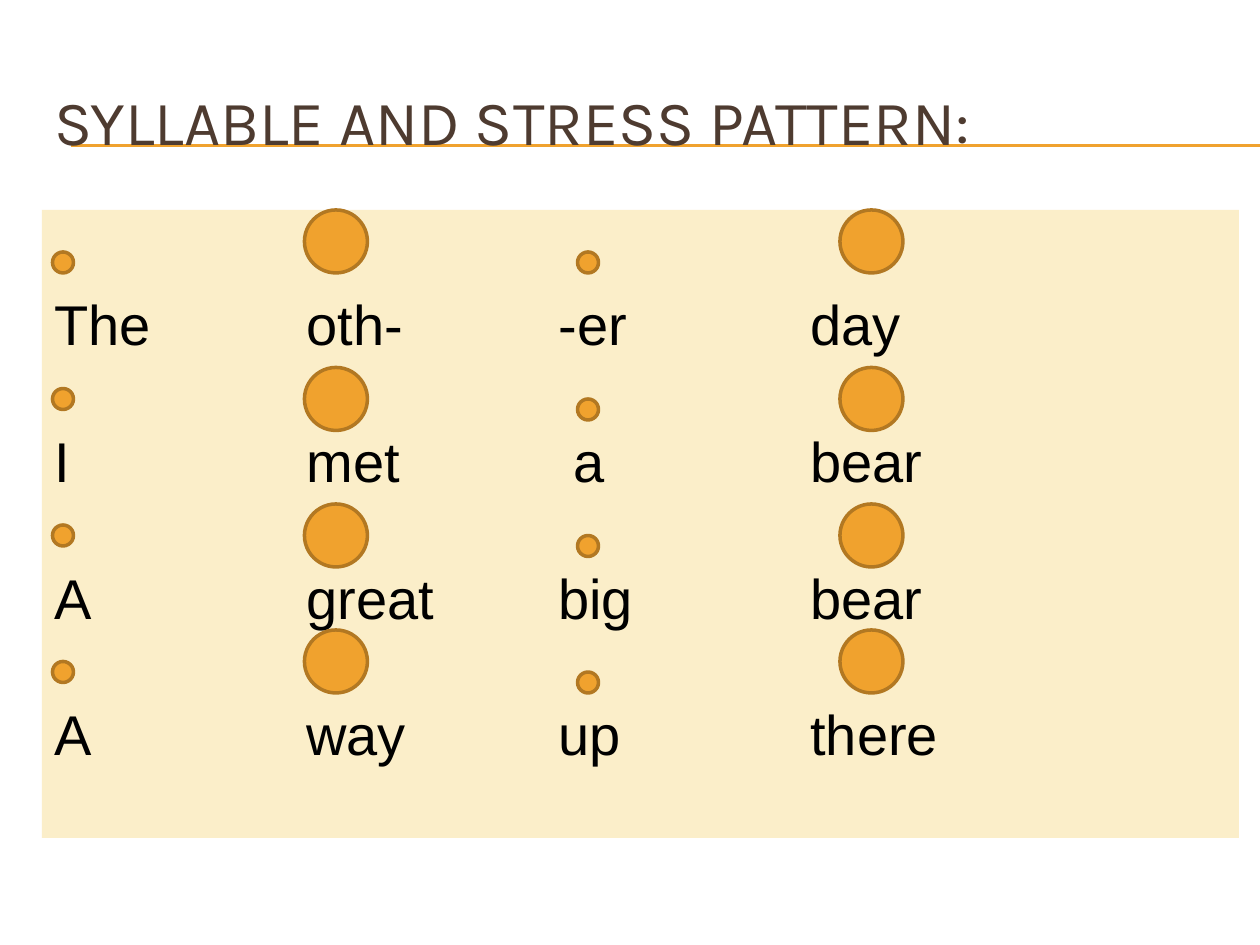
from lxml.etree import SubElement
from pptx import Presentation
from pptx.dml.color import RGBColor
from pptx.enum.shapes import MSO_CONNECTOR as Connector, MSO_SHAPE as Shape
from pptx.enum.text import MSO_ANCHOR as Anchor, PP_ALIGN as Align
from pptx.oxml.ns import qn
from pptx.util import Inches, Pt

WHITE = RGBColor(0xFF, 0xFF, 0xFF)
BLACK = RGBColor(0x00, 0x00, 0x00)
BROWN = RGBColor(0x4E, 0x3B, 0x30)
CREAM = RGBColor(0xFB, 0xEE, 0xC9)
ORANGE = RGBColor(0xF0, 0xA2, 0x2E)
DARK_ORANGE = RGBColor(0xB2, 0x78, 0x22)

# The slide is a grid of 120 columns and 90 rows, twelve to the inch
COLUMNS, ROWS = 120, 90
UNIT = Inches(10) // COLUMNS
SYLLABLE_STEP = 24

TITLE_FONT = {"name": "Karla", "size": Pt(36), "bold": False}
VERSE_FONT = {"name": "Arial", "size": Pt(32), "bold": False}

VERSE = [
    ("The", "oth-", "-er", "day"),
    ("I", "met", " a", "bear"),
    ("A", "great", "big", "bear"),
    ("A", "way", "up", "there"),
]

# Beat size, then the column and the rows of each syllable's beats
WEAK, STRONG = 2, 6
BEATS = [
    (WEAK, 5, (24, 37, 50, 63)),
    (STRONG, 29, (20, 35, 48, 60)),
    (WEAK, 55, (24, 38, 51, 64)),
    (STRONG, 80, (20, 35, 48, 60)),
]


def grid(*cells):
    return [round(cell * UNIT) for cell in cells]


def set_values(target, values):
    for name, value in values.items():
        setattr(target, name, value)


def add_run(paragraph, text, font, color):
    run = paragraph.add_run()
    run.text = text
    set_values(run.font, font)
    run.font.color.rgb = color


def add_rule(slide, row):
    line = slide.shapes.add_connector(
        Connector.STRAIGHT, *grid(6.75, row, COLUMNS, row))
    line.line.color.rgb = ORANGE
    line.line.width = Pt(0.75)
    SubElement(line._element.spPr, qn("a:effectLst"))


def add_title(slide, text):
    box = slide.shapes.add_textbox(*grid(4, 6, 114, 11))
    set_values(box.text_frame,
               {"word_wrap": True, "vertical_anchor": Anchor.MIDDLE})
    add_run(box.text_frame.paragraphs[0], text, TITLE_FONT, BROWN)


def add_shape(slide, kind, cells, fill):
    shape = slide.shapes.add_shape(kind, *grid(*cells))
    shape.shadow.inherit = False
    shape.fill.solid()
    shape.fill.fore_color.rgb = fill
    return shape


def add_tab_stops(paragraph, count):
    tab_list = SubElement(paragraph._p.get_or_add_pPr(), qn("a:tabLst"))
    for index in range(1, count + 1):
        position = index * SYLLABLE_STEP * UNIT
        SubElement(tab_list, qn("a:tab"), pos=str(position), algn="l")


def add_verse(slide, lines):
    panel = add_shape(slide, Shape.RECTANGLE, (4, 20, 114, 59.8), CREAM)
    panel.line.fill.background()
    frame = panel.text_frame
    set_values(frame, {"word_wrap": True, "vertical_anchor": Anchor.TOP,
                       "margin_top": Inches(0.63)})
    for index, syllables in enumerate(lines):
        paragraph = frame.add_paragraph() if index else frame.paragraphs[0]
        set_values(paragraph, {"alignment": Align.LEFT,
                               "space_before": Pt(39.8 if index else 0)})
        add_tab_stops(paragraph, len(syllables) - 1)
        add_run(paragraph, "\t".join(syllables), VERSE_FONT, BLACK)


def add_beat(slide, column, row, size):
    beat = add_shape(slide, Shape.OVAL, (column, row, size, size), ORANGE)
    beat.line.color.rgb = DARK_ORANGE
    beat.line.width = Pt(2)


def main():
    presentation = Presentation()
    set_values(presentation, {"slide_width": COLUMNS * UNIT,
                              "slide_height": ROWS * UNIT})
    slide = presentation.slides.add_slide(presentation.slide_layouts[6])
    slide.background.fill.solid()
    slide.background.fill.fore_color.rgb = WHITE

    # Heading over a double rule
    for row in (13.8, 13.9):
        add_rule(slide, row)
    add_title(slide, "SYLLABLE AND STRESS PATTERN:")

    # Verse with a weak or strong beat above each syllable
    add_verse(slide, VERSE)
    for size, column, rows in BEATS:
        for row in rows:
            add_beat(slide, column, row, size)

    presentation.save("out.pptx")


if __name__ == "__main__":
    main()
